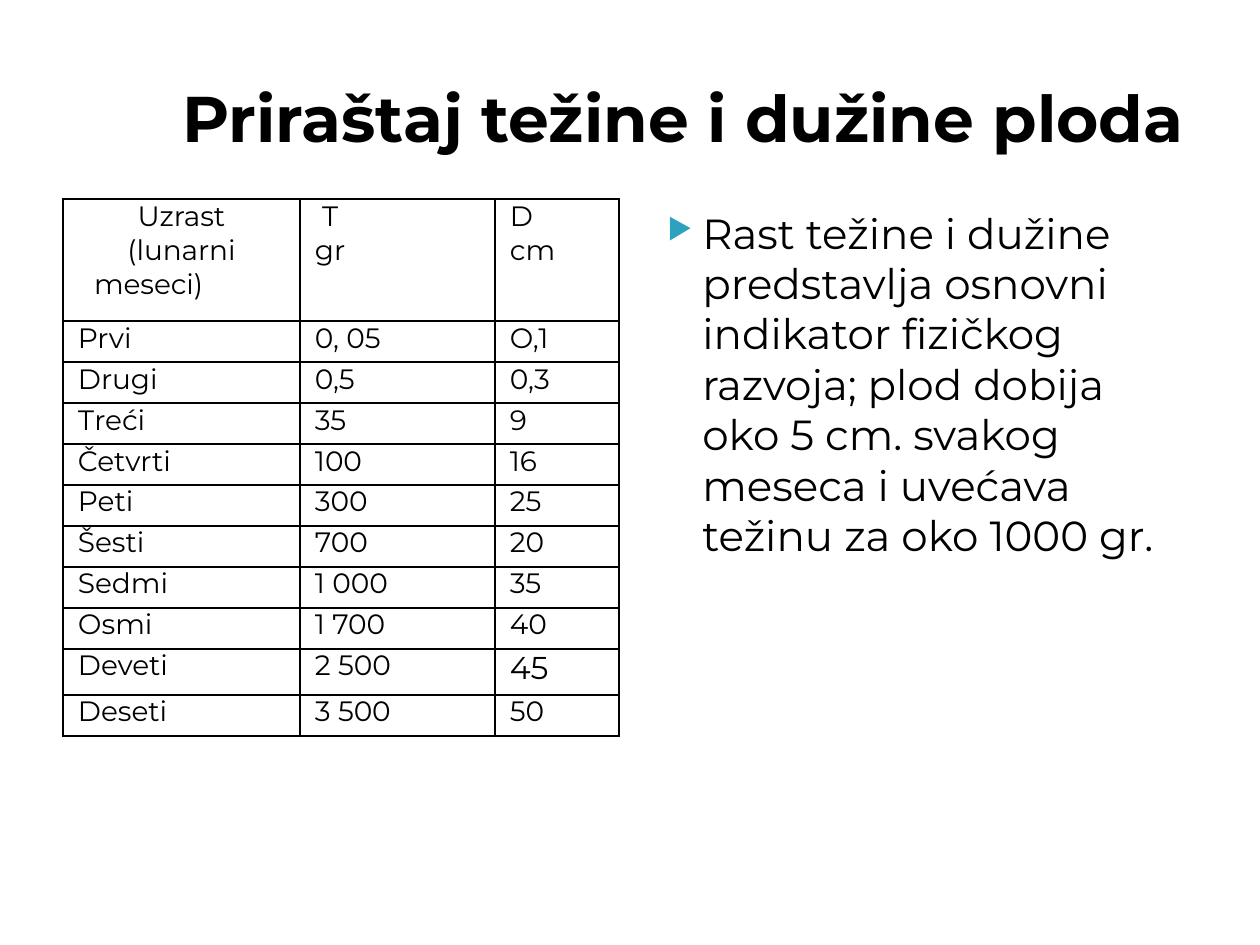
import pptx
import pptx.util
import pptx.dml.color
import pptx.enum.text
import pptx.oxml.ns
import lxml.etree

SCALE = 914400 / 126
FONT = "Montserrat"
COLORS = {"text": "000000", "line": "000000", "bullet": "2DA2BF"}
ALIGN = pptx.enum.text.PP_ALIGN
ANCHOR = pptx.enum.text.MSO_ANCHOR

HEAD = [["Uzrast", "(lunarni", "meseci)"], [" T", "gr"], ["D", "cm"]]
ROWS = [
    ("Prvi", "0, 05", "O,1"),
    ("Drugi", "0,5", "0,3"),
    ("Тreći", "35", "9"),
    ("Četvrti", "100", "16"),
    ("Peti", "300", "25"),
    ("Šesti", "700", "20"),
    ("Sedmi", "1 000", "35"),
    ("Оsmi", "1 700", "40"),
    ("Deveti", "2 500", "45"),
    ("Deseti", "3 500", "50"),
]
BODY = ("Rast težine i dužine predstavlja osnovni indikator fizičkog razvoja; "
        "plod dobija oko 5 cm. svakog meseca i uvećava težinu za oko 1000 gr.")


def px(n):
    return pptx.util.Emu(round(n * SCALE))


def add(node, tag, **attrs):
    return lxml.etree.SubElement(node, pptx.oxml.ns.qn(tag), attrs)


class Deck:
    def __init__(self, wide, high):
        self.show = pptx.Presentation()
        self.show.slide_width = px(wide)
        self.show.slide_height = px(high)
        self.slide = self.show.slides.add_slide(self.show.slide_layouts[6])

    def run(self, para, text, size, align, bold=False):
        para.alignment = align
        run = para.add_run()
        run.text = text
        font = run.font
        font.name, font.size, font.bold = FONT, pptx.util.Pt(size), bold
        font.color.rgb = pptx.dml.color.RGBColor.from_string(COLORS["text"])

    def text(self, box, text, size, align, anchor, bold=False):
        frame = self.slide.shapes.add_textbox(*map(px, box)).text_frame
        frame.word_wrap = True
        frame.vertical_anchor = anchor
        para = frame.paragraphs[0]
        self.run(para, text, size, align, bold)
        return para

    def bullet(self, para, left, hang):
        props = para._p.get_or_add_pPr()
        props.set("marL", str(px(left)))
        props.set("indent", str(-px(hang)))
        add(add(props, "a:buClr"), "a:srgbClr", val=COLORS["bullet"])
        add(props, "a:buSzPct", val="68000")
        add(props, "a:buChar", char="▶")

    def border(self, cell):
        props = cell._tc.get_or_add_tcPr()
        for side in ("L", "R", "T", "B"):
            line = add(props, "a:ln" + side, w=str(pptx.util.Pt(1)))
            add(add(line, "a:solidFill"), "a:srgbClr", val=COLORS["line"])

    def cell(self, cell, lines, size, aligns):
        cell.margin_left = cell.margin_right = px(15)
        cell.margin_top = cell.margin_bottom = 0
        self.border(cell)
        cell.fill.background()
        frame = cell.text_frame
        for i, (line, align) in enumerate(zip(lines, aligns)):
            para = frame.add_paragraph() if i else frame.paragraphs[0]
            self.run(para, line, size, align)
        return frame

    def table(self, left, top, cols, highs):
        box = map(px, (left, top, sum(cols), sum(highs)))
        grid = self.slide.shapes.add_table(len(highs), len(cols), *box).table
        grid.first_row = grid.horz_banding = False
        for col, wide in zip(grid.columns, cols):
            col.width = px(wide)
        for row, high in zip(grid.rows, highs):
            row.height = px(high)
        return grid


def main():
    deck = Deck(1260, 945)
    deck.text((63, 38, 1134, 158), "Priraštaj težine i dužine ploda",
              36.9, ALIGN.RIGHT, ANCHOR.MIDDLE, True)

    highs = [122] + [46 if row[0] == "Deveti" else 41 for row in ROWS]
    grid = deck.table(63, 199, [237, 195, 124], highs)
    for c, lines in enumerate(HEAD):
        aligns = [ALIGN.JUSTIFY] * 2 if c else [ALIGN.CENTER, ALIGN.CENTER, ALIGN.LEFT]
        frame = deck.cell(grid.cell(0, c), lines, 16, aligns)
        if c == 0:
            frame.paragraphs[2]._p.get_or_add_pPr().set("marL", str(px(16)))
    for r, row in enumerate(ROWS, 1):
        for c, text in enumerate(row):
            size = 18 if text == "45" else 16
            deck.cell(grid.cell(r, c), [text], size, [ALIGN.JUSTIFY])

    para = deck.text((640, 201, 557, 543), BODY, 24, ALIGN.LEFT, ANCHOR.TOP)
    deck.bullet(para, 50, 35)
    deck.show.save("out.pptx")


if __name__ == "__main__":
    main()
